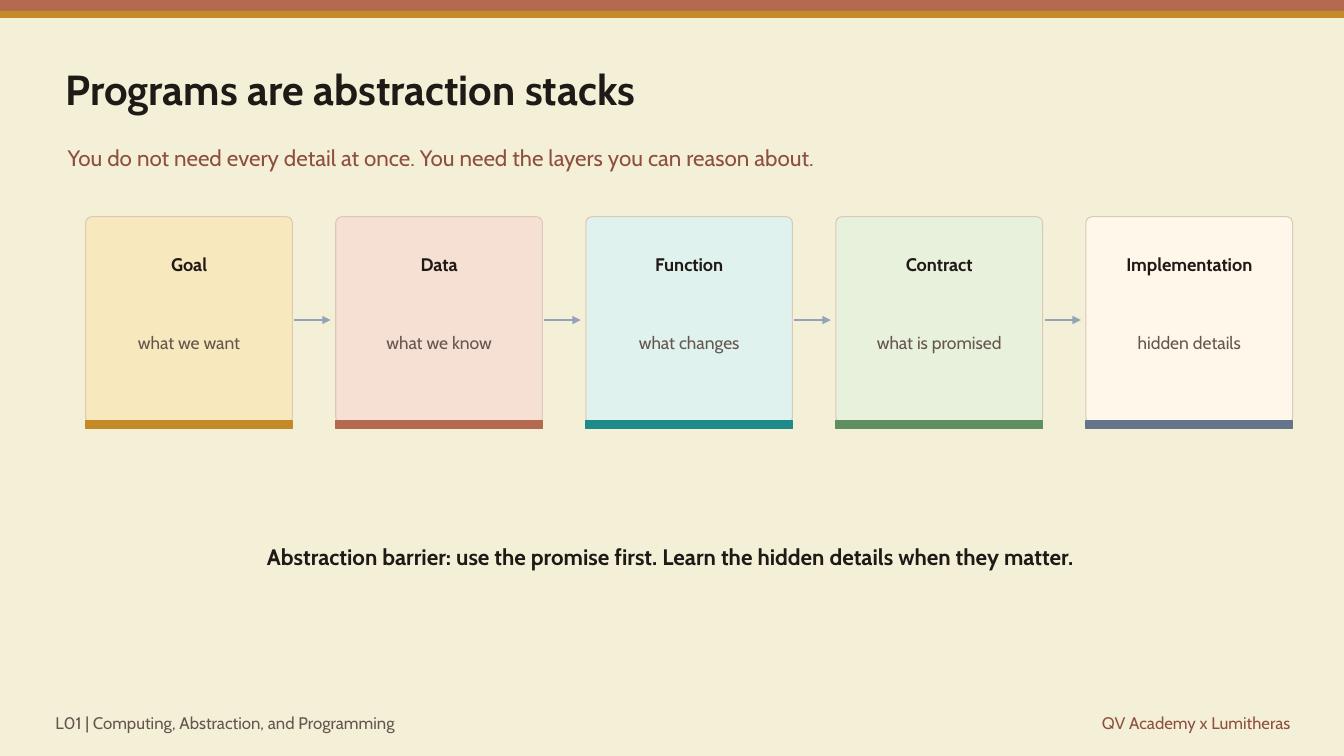
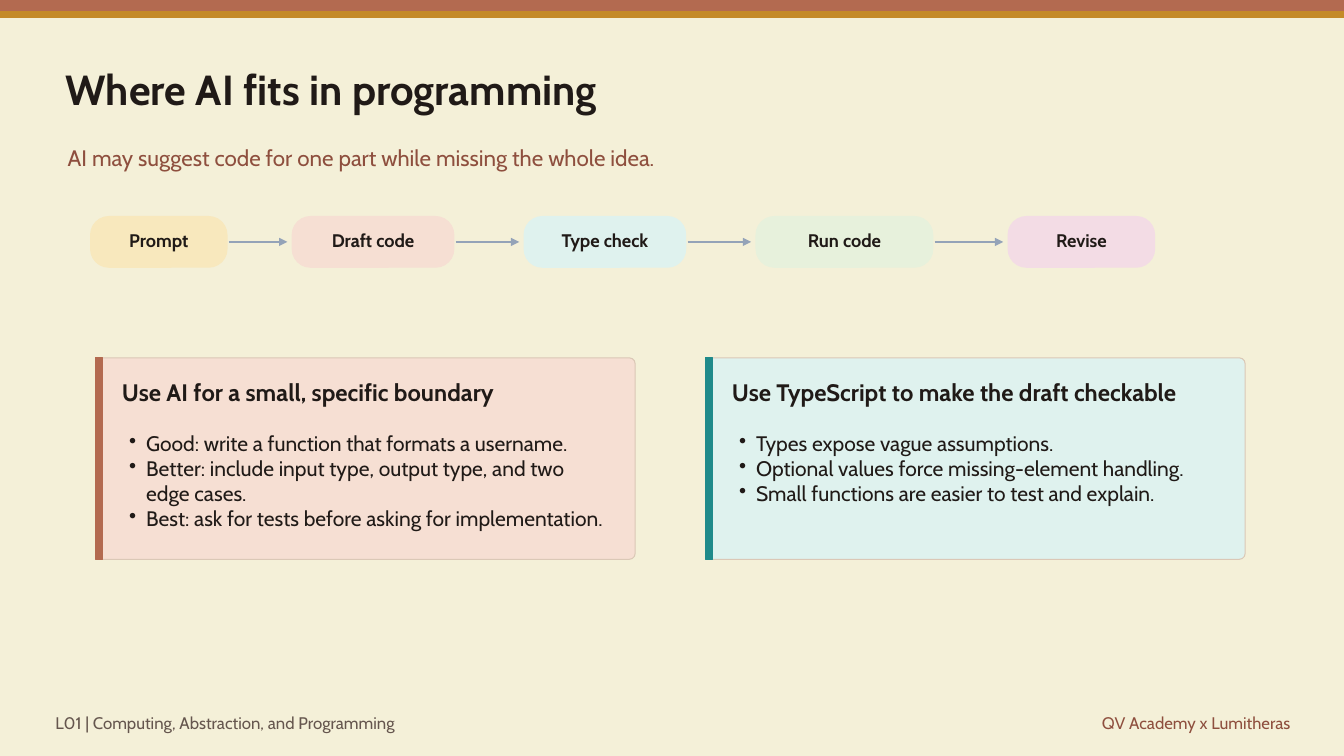
from lxml import etree
from pptx import Presentation
from pptx.dml.color import RGBColor
from pptx.enum.shapes import MSO_CONNECTOR, MSO_SHAPE
from pptx.enum.text import MSO_ANCHOR, PP_ALIGN
from pptx.oxml.ns import qn
from pptx.util import Inches, Pt

RECT, ROUNDED = MSO_SHAPE.RECTANGLE, MSO_SHAPE.ROUNDED_RECTANGLE
STRAIGHT = MSO_CONNECTOR.STRAIGHT
LEFT, CENTER, RIGHT = PP_ALIGN.LEFT, PP_ALIGN.CENTER, PP_ALIGN.RIGHT
TOP, MIDDLE = MSO_ANCHOR.TOP, MSO_ANCHOR.MIDDLE

# Theme
FONT = "Cabin"
PAPER = RGBColor(0xF4, 0xF0, 0xD8)
INK = RGBColor(0x20, 0x1A, 0x17)
MUTED = RGBColor(0x65, 0x56, 0x4E)
RUST = RGBColor(0x8E, 0x4F, 0x3E)
BORDER = RGBColor(0xDB, 0xC8, 0xB6)
ARROW = RGBColor(0x94, 0xA3, 0xB8)
CLAY = RGBColor(0xB3, 0x6A, 0x50)
OCHRE = RGBColor(0xC4, 0x8A, 0x28)
TEAL = RGBColor(0x1F, 0x8A, 0x8A)
GREEN = RGBColor(0x5F, 0x8F, 0x5F)
SLATE = RGBColor(0x64, 0x74, 0x8B)
PALE_OCHRE = RGBColor(0xF8, 0xE8, 0xBD)
PALE_CLAY = RGBColor(0xF6, 0xDF, 0xD3)
PALE_TEAL = RGBColor(0xDF, 0xF2, 0xEE)
PALE_GREEN = RGBColor(0xE7, 0xF1, 0xDC)
PALE_PINK = RGBColor(0xF3, 0xDC, 0xE5)
CREAM = RGBColor(0xFF, 0xF8, 0xEA)

# Grid, in inches
SLIDE_WIDTH, SLIDE_HEIGHT = 13.33, 7.5
FLOW_TOP = 2.15
CARD_LEFT, CARD_PITCH, CARD_SIZE = 0.85, 2.48, 2.05
PILL_HEIGHT = 0.5
PANEL_LEFT, PANEL_PITCH, PANEL_TOP = 0.95, 6.05, 3.55
PANEL_WIDTH, PANEL_HEIGHT = 5.35, 2
CORNER = 0.06

# Content
FOOTER = "L01 | Computing, Abstraction, and Programming"
CREDIT = "QV Academy x Lumitheras"
CARDS = [
    ("Goal", "what we want", PALE_OCHRE, OCHRE),
    ("Data", "what we know", PALE_CLAY, CLAY),
    ("Function", "what changes", PALE_TEAL, TEAL),
    ("Contract", "what is promised", PALE_GREEN, GREEN),
    ("Implementation", "hidden details", CREAM, SLATE),
]
PILLS = [  # label, left, width, fill
    ("Prompt", 0.9, 1.35, PALE_OCHRE),
    ("Draft code", 2.9, 1.6, PALE_CLAY),
    ("Type check", 5.2, 1.6, PALE_TEAL),
    ("Run code", 7.5, 1.75, PALE_GREEN),
    ("Revise", 10, 1.45, PALE_PINK),
]
PANELS = [
    ("Use AI for a small, specific boundary", PALE_CLAY, CLAY, [
        "Good: write a function that formats a username.",
        "Better: include input type, output type, and two edge cases.",
        "Best: ask for tests before asking for implementation.",
    ]),
    ("Use TypeScript to make the draft checkable", PALE_TEAL, TEAL, [
        "Types expose vague assumptions.",
        "Optional values force missing-element handling.",
        "Small functions are easier to test and explain.",
    ]),
]


def inches(*lengths):
    return [Inches(length) for length in lengths]


def add_block(page, area, fill, line=None, line_width=1, radius=0):
    """Filled rectangle; a radius in inches rounds its corners."""
    block = page.shapes.add_shape(ROUNDED if radius else RECT, *inches(*area))
    block.shadow.inherit = False
    block.fill.solid()
    block.fill.fore_color.rgb = fill
    block.line.color.rgb = line or fill
    block.line.width = Pt(line_width)
    if radius:
        block.adjustments[0] = radius / min(area[2:])


def add_bullet(para):
    properties = para._p.get_or_add_pPr()
    properties.set("marL", str(Inches(0.17)))
    properties.set("indent", str(-Inches(0.17)))
    etree.SubElement(properties, qn("a:buChar")).set("char", "•")


def add_text(page, area, lines, size, color=INK, bold=False, align=LEFT,
             anchor=MIDDLE, bullets=False):
    frame = page.shapes.add_textbox(*inches(*area)).text_frame
    frame.word_wrap = True
    frame.vertical_anchor = anchor
    frame.margin_left = frame.margin_right = 0
    frame.margin_top = frame.margin_bottom = 0
    for index, line in enumerate(lines):
        para = frame.add_paragraph() if index else frame.paragraphs[0]
        para.alignment = align
        if bullets:
            add_bullet(para)
        span = para.add_run()
        span.text = line
        span.font.name = FONT
        span.font.size = Pt(size)
        span.font.bold = bold
        span.font.color.rgb = color


def add_arrow(page, box_right, next_left, y):
    """Arrow in the gap between two neighbouring boxes."""
    arrow = page.shapes.add_connector(
        STRAIGHT, *inches(box_right + 0.02, y, next_left - 0.05, y))
    arrow.line.color.rgb = ARROW
    arrow.line.width = Pt(1.5)
    etree.SubElement(arrow.line._get_or_add_ln(), qn("a:tailEnd")).set("type", "triangle")
    etree.SubElement(arrow._element.spPr, qn("a:effectLst"))


def add_page(deck, title, subtitle):
    """Blank page with the shared bands, footer and headings."""
    page = deck.slides.add_slide(deck.slide_layouts[6])
    page.background.fill.solid()
    page.background.fill.fore_color.rgb = PAPER
    add_block(page, (0, 0, SLIDE_WIDTH, 0.12), CLAY)
    add_block(page, (0, 0.12, SLIDE_WIDTH, 0.05), OCHRE)
    add_text(page, (0.55, 7.05, 7.8, 0.24), [FOOTER], 12, MUTED)
    add_text(page, (8.15, 7.05, 4.65, 0.24), [CREDIT], 12, RUST, align=RIGHT)
    add_text(page, (0.65, 0.52, 11.95, 0.72), [title], 30, bold=True)
    add_text(page, (0.67, 1.32, 11.65, 0.48), [subtitle], 16, RUST)
    return page


def add_card(page, left, name, note, fill, accent):
    inner_left, inner_width = left + 0.18, CARD_SIZE - 0.36
    add_block(page, (left, FLOW_TOP, CARD_SIZE, CARD_SIZE), fill, BORDER, 0.75, CORNER)
    add_text(page, (inner_left, FLOW_TOP + 0.3, inner_width, 0.35), [name], 13,
             bold=True, align=CENTER)
    add_text(page, (inner_left, FLOW_TOP + 0.89, inner_width, 0.72), [note], 12.5,
             MUTED, align=CENTER)
    add_block(page, (left, FLOW_TOP + 2.02, CARD_SIZE, 0.08), accent)


def add_pill(page, label, left, width, fill):
    add_block(page, (left, FLOW_TOP, width, PILL_HEIGHT), fill, radius=0.18)
    add_text(page, (left + 0.12, FLOW_TOP + 0.14, width - 0.24, 0.18), [label], 13,
             bold=True, align=CENTER)


def add_panel(page, left, heading, fill, accent, points):
    add_block(page, (left, PANEL_TOP, PANEL_WIDTH, PANEL_HEIGHT), fill, BORDER, 0.75, CORNER)
    add_block(page, (left, PANEL_TOP, 0.07, PANEL_HEIGHT), accent)
    add_text(page, (left + 0.26, PANEL_TOP + 0.2, 4.85, 0.28), [heading], 17, bold=True)
    add_text(page, (left + 0.33, PANEL_TOP + 0.72, 4.77, 1.1), points, 15,
             anchor=TOP, bullets=True)


def build_stack_page(deck):
    page = add_page(deck, "Programs are abstraction stacks",
                    "You do not need every detail at once. "
                    "You need the layers you can reason about.")
    for column, card in enumerate(CARDS):
        left = CARD_LEFT + column * CARD_PITCH
        add_card(page, left, *card)
        if column < len(CARDS) - 1:
            add_arrow(page, left + CARD_SIZE, left + CARD_PITCH, FLOW_TOP + CARD_SIZE / 2)
    add_text(page, (1.15, 5.35, 11, 0.34),
             ["Abstraction barrier: use the promise first. "
              "Learn the hidden details when they matter."],
             16, bold=True, align=CENTER)


def build_workflow_page(deck):
    page = add_page(deck, "Where AI fits in programming",
                    "AI may suggest code for one part while missing the whole idea.")
    for pill in PILLS:
        add_pill(page, *pill)
    for (_, left, width, _), (_, next_left, _, _) in zip(PILLS, PILLS[1:]):
        add_arrow(page, left + width, next_left, FLOW_TOP + PILL_HEIGHT / 2)
    for column, panel in enumerate(PANELS):
        add_panel(page, PANEL_LEFT + column * PANEL_PITCH, *panel)


def main():
    deck = Presentation()
    deck.slide_width, deck.slide_height = inches(SLIDE_WIDTH, SLIDE_HEIGHT)
    build_stack_page(deck)
    build_workflow_page(deck)
    deck.save("out.pptx")


if __name__ == "__main__":
    main()
